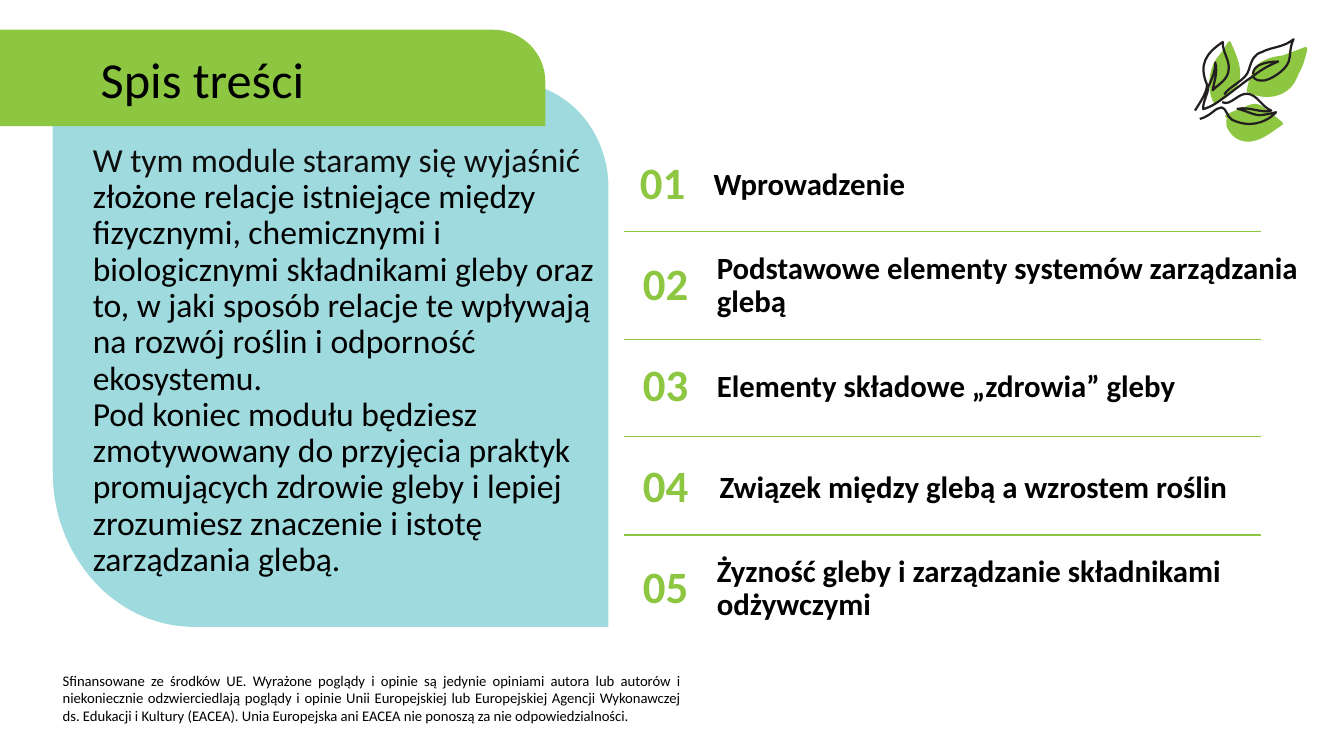
import math
from dataclasses import dataclass

from pptx import Presentation
from pptx import util as u
from pptx.dml import color as dml
from pptx.enum import shapes, text
from pptx.oxml import xmlchemy

Pt = u.Pt


@dataclass(frozen=True)
class Theme:
    font: str = "Calibri"
    green: str = "8DC641"
    blue: str = "9FDADF"
    ink: str = "231F20"
    black: str = "000000"
    soft_black: str = "0D0D0D"
    title: float = 36
    number: float = 32
    body: float = 24
    label: float = 22
    footer: float = 10.5
    rule: float = 1
    stroke: float = 1.6


THEME = Theme()
MIDDLE = text.MSO_ANCHOR.MIDDLE
TOP = text.MSO_ANCHOR.TOP

PANEL = [(434.6, 447.8), (139, 447.8), (82.8, 447.8, 37.7, 398.2, 37.7, 337),
         (37.7, 59), (365.8, 59), (403.9, 59, 434.6, 92.9, 434.6, 133.9)]
BANNER = [(0, 21.2), (352, 21.2), (373, 21.2, 389.5, 38, 389.5, 58.3), (389.5, 90), (0, 90)]

LEAF_TILT = 62.2
LEAVES = [
    [(869.8, 73.4), (877, 69.8, 884.2, 64.1, 885.6, 56.2),
     (887, 47.5, 882.7, 38.2, 879.1, 30.2), (879.1, 28.8, 877.7, 29.5, 877, 30.2),
     (874.8, 34.6, 871.9, 38.2, 869, 41.8), (866.9, 44.6, 865.4, 48.2, 864.7, 51.8),
     (863.3, 58.3, 863.3, 65.5, 866.2, 72), (866.2, 74, 867.6, 74.5, 869.8, 73.4)],
    [(919.4, 64.8), (923.8, 61.9, 925.9, 56.9, 928.1, 51.8),
     (931, 46.8, 932.4, 41, 933.8, 35.3), (933.8, 33.8, 933.1, 33.1, 931.7, 33.8),
     (926.6, 36, 921.6, 37.4, 916.6, 39.6), (911.5, 40.3, 907.2, 41, 902.9, 43.2),
     (899.3, 44.6, 896.4, 47.5, 895, 51.1), (892.8, 55.4, 891.4, 59.8, 890.6, 64.1),
     (889.9, 65.5, 890.6, 66.2, 892.1, 66.2), (900.7, 70.6, 911.5, 70.6, 919.4, 64.8)],
    [(915.8, 89.3), (916.6, 88.6, 916.6, 87.8, 915.8, 87.1),
     (912.2, 84.2, 908.6, 81.4, 905, 78.5), (902.2, 76.3, 900, 74.2, 896.4, 74.2),
     (893.5, 74.2, 890.6, 75.6, 887.8, 77), (884.9, 77.8, 878.4, 80.6, 875.5, 82.1),
     (874.8, 82.1, 874.8, 84.2, 876.2, 84.2), (875.5, 86.4, 876.2, 89.3, 876.2, 90.7),
     (878.4, 95, 881.3, 98.6, 885.6, 100.1), (897.1, 104.4, 907.2, 95, 915.8, 89.3)],
]

LEAF_STROKES = [
    [(853.6, 79), (858, 72, 862, 66, 862.2, 60.5), (856, 46, 861.5, 38, 873.4, 30),
     (873.4, 38, 878, 42, 877.7, 49), (877.5, 57, 870.5, 60, 866.2, 64.5),
     (867, 59, 870, 52, 868.1, 44.6), (868, 51, 866, 56, 863, 62),
     (863, 68, 859, 72, 859.5, 78), (866, 76, 870, 73, 874.5, 69.5),
     (885, 62, 888, 59, 895, 54.5), (902, 49, 906, 47, 913, 44),
     (905, 44, 895, 46, 895, 53)],
    [(874.5, 67.5), (878, 61.5, 890, 57.5, 892, 50), (894, 43, 896, 38.5, 901.4, 37.2),
     (908, 33.5, 917, 34, 924, 28), (921, 34, 922, 40, 920.5, 44),
     (918, 51, 907, 57, 903, 57.5), (899, 58, 897, 57, 895, 55)],
    [(873, 73), (879, 76, 884, 66.5, 891, 67), (898, 67.5, 901, 76, 908, 79),
     (900, 81, 893, 76, 884, 77.8), (890, 79, 896, 82.5, 900, 82.3),
     (904, 82, 908, 81, 911.5, 80.2), (903, 89, 891, 91, 880, 85.5),
     (876, 83, 876, 77, 872.6, 76.8), (868, 76.8, 865, 83, 857, 85)],
]

ENTRIES = [
    ("Wprowadzenie", 445.7, 502.7, 351.4),
    ("Podstawowe elementy systemów zarządzania glebą", 447.8, 504.9, 455),
    ("Elementy składowe „zdrowia” gleby", 447.8, 504.9, 351.4),
    ("Związek między glebą a wzrostem roślin", 447.8, 506.9, 438.5),
    ("Żyzność gleby i zarządzanie składnikami odżywczymi", 447.8, 504.9, 401.8),
]
ENTRY_TOP, ENTRY_PITCH, ENTRY_HEIGHT = 105.4, 72.1, 54
RULES = (165.4, 242.6, 312, 382.3)

INTRO = [
    [("W tym module staramy się wyjaśnić ", THEME.soft_black),
     ("złożone relacje istniejące między fizycznymi, chemicznymi i biologicznymi "
      "składnikami gleby oraz to, w jaki sposób relacje te wpływają na rozwój roślin "
      "i odporność ekosystemu.", THEME.black)],
    [("Pod koniec modułu będziesz zmotywowany do przyjęcia praktyk promujących zdrowie "
      "gleby i lepiej zrozumiesz znaczenie i istotę zarządzania glebą.", THEME.black)],
]
FOOTER = (
    "Sfinansowane ze środków UE. Wyrażone poglądy i opinie są jedynie opiniami autora "
    "lub autorów i niekoniecznie odzwierciedlają poglądy i opinie Unii Europejskiej lub "
    "Europejskiej Agencji Wykonawczej ds. Edukacji i Kultury (EACEA). Unia Europejska "
    "ani EACEA nie ponoszą za nie odpowiedzialności."
)


def rgb(value):
    return dml.RGBColor.from_string(value)


def apply(target, formats):
    for name, value in formats.items():
        setattr(target, name, value)


def turn(x, y, degrees):
    angle = math.radians(degrees)
    return (x * math.cos(angle) - y * math.sin(angle),
            x * math.sin(angle) + y * math.cos(angle))


def curve_segments(shape, outlines):
    lines = iter(shape._element.xpath(".//a:lnTo"))
    for outline in outlines:
        for segment in outline[1:]:
            first = next(lines)
            if len(segment) == 2:
                continue
            curve = xmlchemy.OxmlElement("a:cubicBezTo")
            first.addprevious(curve)
            for line in (first, next(lines), next(lines)):
                curve.append(line[0])
                line.getparent().remove(line)


def add_outline(slide, outlines, fill=None, tilt=0):
    builder = None
    for outline in outlines:
        values = [value for segment in outline for value in segment]
        start, *points = [turn(Pt(x), Pt(y), -tilt)
                          for x, y in zip(values[::2], values[1::2])]
        if builder is None:
            builder = slide.shapes.build_freeform(*start, scale=1.0)
        else:
            builder.move_to(*start)
        builder.add_line_segments(points, close=fill is not None)
    shape = builder.convert_to_shape()
    curve_segments(shape, outlines)
    center_x, center_y = turn(shape.left + shape.width / 2, shape.top + shape.height / 2, tilt)
    apply(shape, {"left": round(center_x - shape.width / 2),
                  "top": round(center_y - shape.height / 2), "rotation": tilt})
    shape.shadow.inherit = False
    if fill:
        shape.fill.solid()
        shape.fill.fore_color.rgb = rgb(fill)
        shape.line.fill.background()
    else:
        shape.fill.background()
        shape.line.color.rgb = rgb(THEME.ink)
        shape.line.width = Pt(THEME.stroke)


def add_rule(slide, y):
    rule = slide.shapes.add_connector(
        shapes.MSO_CONNECTOR.STRAIGHT, Pt(900.7), Pt(y), Pt(445.7), Pt(y))
    rule.line.color.rgb = rgb(THEME.green)
    rule.line.width = Pt(THEME.rule)
    rule._element.spPr.append(xmlchemy.OxmlElement("a:effectLst"))


def add_text(slide, box, paragraphs, size, anchor=MIDDLE, bold=False,
             align=text.PP_ALIGN.LEFT, spacing=0.9):
    frame = slide.shapes.add_textbox(*(Pt(length) for length in box)).text_frame
    apply(frame, {"word_wrap": True, "vertical_anchor": anchor})
    for index, runs in enumerate(paragraphs):
        paragraph = frame.paragraphs[0] if index == 0 else frame.add_paragraph()
        apply(paragraph, {"alignment": align, "line_spacing": spacing})
        for content, color in runs:
            run = paragraph.add_run()
            run.text = content
            apply(run.font, {"name": THEME.font, "size": Pt(size), "bold": bold})
            run.font.color.rgb = rgb(color)


def add_entry(slide, index, label, number_left, label_left, label_width):
    top = ENTRY_TOP + index * ENTRY_PITCH
    add_text(slide, (number_left, top, 55.4, ENTRY_HEIGHT), [[(f"{index + 1:02}", THEME.green)]],
             THEME.number, bold=True, align=text.PP_ALIGN.CENTER)
    add_text(slide, (label_left, top, label_width, ENTRY_HEIGHT),
             [[(label, THEME.black)]], THEME.label, bold=True)


def main():
    presentation = Presentation()
    apply(presentation, {"slide_width": Pt(960), "slide_height": Pt(540)})
    slide = presentation.slides.add_slide(presentation.slide_layouts[6])
    add_outline(slide, [PANEL], THEME.blue)
    add_outline(slide, [BANNER], THEME.green)
    for y in RULES:
        add_rule(slide, y)
    add_text(slide, (37.7, 476.2, 455.8, 47.5), [[(FOOTER, THEME.black)]], THEME.footer,
             anchor=TOP, align=text.PP_ALIGN.JUSTIFY, spacing=1.0)
    add_text(slide, (59.2, 98.9, 375.1, 313.9), INTRO, THEME.body, anchor=TOP)
    for index, entry in enumerate(ENTRIES):
        add_entry(slide, index, *entry)
    add_text(slide, (64.8, 30.2, 396.7, 56.9), [[("Spis treści", THEME.black)]], THEME.title)
    for leaf in LEAVES:
        add_outline(slide, [leaf], THEME.green, LEAF_TILT)
    add_outline(slide, LEAF_STROKES, tilt=LEAF_TILT)
    presentation.save("out.pptx")


if __name__ == "__main__":
    main()
